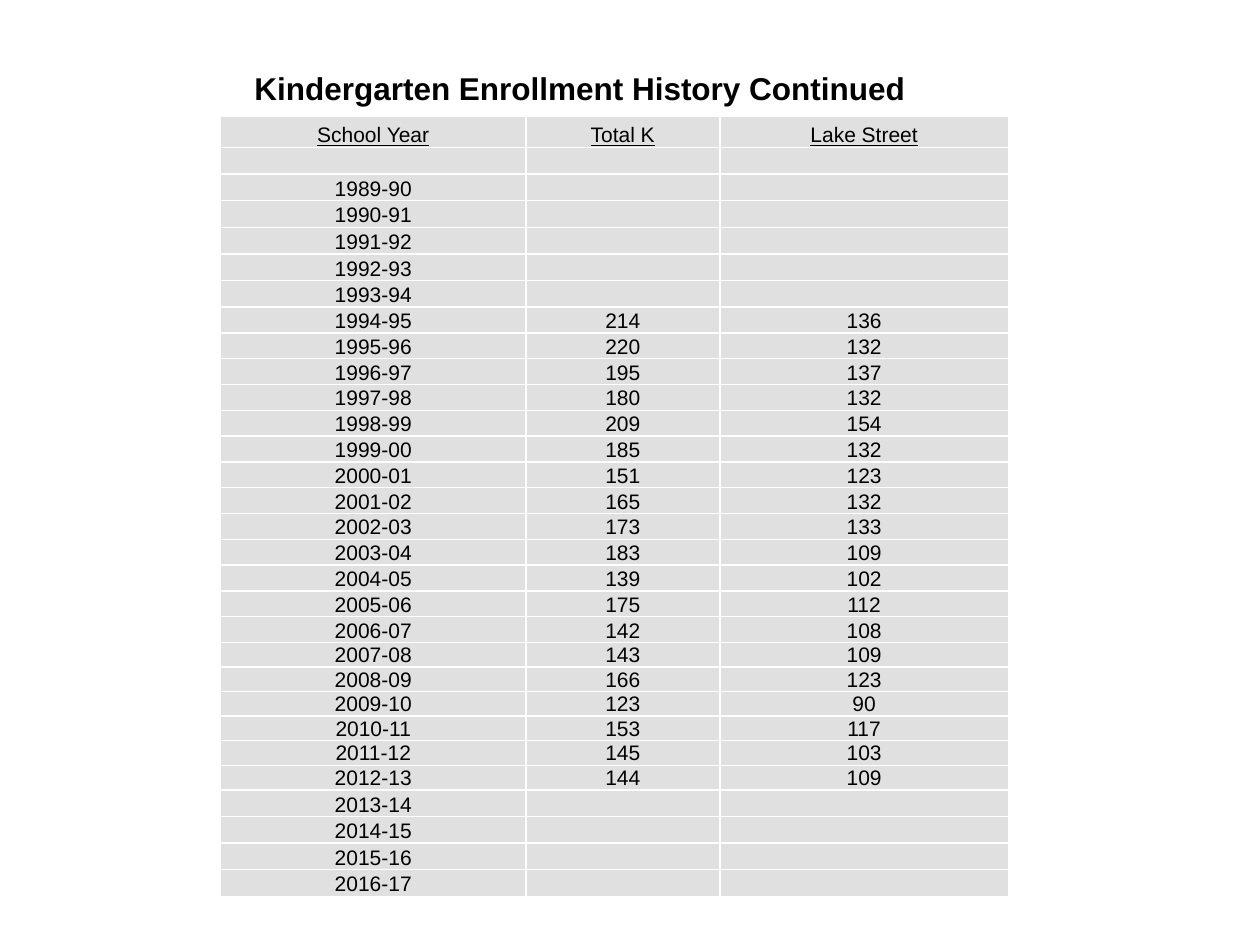
from lxml.etree import SubElement as Sub
from pptx import Presentation
from pptx.dml.color import RGBColor
from pptx.enum.text import MSO_ANCHOR as Anchor, PP_ALIGN as Align
from pptx.oxml.ns import qn
from pptx.util import Cm, Pt

# Content
TITLE = "Kindergarten Enrollment History Continued"
HEADS = ["School Year", "Total K", "Lake Street"]
FIRST, LAST = 1989, 2016
START = 1994  # first year with counts
TOTAL = [214, 220, 195, 180, 209, 185, 151, 165, 173, 183,
         139, 175, 142, 143, 166, 123, 153, 145, 144]
LAKE = [136, 132, 137, 132, 154, 132, 123, 132, 133, 109,
        102, 112, 108, 109, 123, 90, 117, 103, 109]

# Layout in cm
WIDTHS = [6.15, 3.91, 5.82]
HEIGHTS = [0.63] + [0.52] * 19 + [0.49] * 10
LEFT, TOP = 4.45, 2.34
INK, GREY, WHITE = "000000", "E1E0E0", "FFFFFF"


def color(code):
    return RGBColor.from_string(code)


def write(frame, text, size=12, bold=False, line=False, align=Align.LEFT):
    para = frame.paragraphs[0]
    para.alignment = align
    if not text:
        # An empty cell still needs a text size, or its row grows
        Sub(para._p, qn("a:endParaRPr"), sz=str(size * 100))
        return
    run = para.add_run()
    run.text = text
    font = run.font
    font.name, font.size = "Arial", Pt(size)
    font.bold, font.underline = bold, line
    font.color.rgb = color(INK)


def edge(cell):
    props = cell._tc.get_or_add_tcPr()
    for spot, side in enumerate(("lnL", "lnR", "lnT", "lnB")):
        line = props.makeelement(qn("a:" + side), {"w": str(Pt(1))})
        fill = Sub(line, qn("a:solidFill"))
        Sub(fill, qn("a:srgbClr"), val=WHITE)
        props.insert(spot, line)


def year_rows():
    counts = dict(enumerate(zip(TOTAL, LAKE), START))
    for year in range(FIRST, LAST + 1):
        pair = counts.get(year, ("", ""))
        yield [f"{year}-{(year + 1) % 100:02}", *map(str, pair)]


deck = Presentation()
deck.slide_width, deck.slide_height = Cm(25.4), Cm(19.05)
slide = deck.slides.add_slide(deck.slide_layouts[6])

# Enrollment table
rows = [HEADS, [""] * 3, *year_rows()]
table = slide.shapes.add_table(
    len(rows), len(HEADS), Cm(LEFT), Cm(TOP),
    Cm(sum(WIDTHS)), Cm(sum(HEIGHTS))).table
table.first_row = table.horz_banding = False
for col, width in zip(table.columns, WIDTHS):
    col.width = Cm(width)
for num, (row, height) in enumerate(zip(table.rows, HEIGHTS)):
    row.height = Cm(height)
    for cell, text in zip(row.cells, rows[num]):
        cell.fill.solid()
        cell.fill.fore_color.rgb = color(GREY)
        cell.margin_left = cell.margin_right = cell.margin_top = Cm(0.02)
        cell.margin_bottom = 0
        cell.vertical_anchor = Anchor.BOTTOM
        edge(cell)
        write(cell.text_frame, text, line=num == 0, align=Align.CENTER)

# Title
box = slide.shapes.add_textbox(Cm(4.88), Cm(1.27), Cm(15.44), Cm(1.02))
box.text_frame.word_wrap = True
write(box.text_frame, TITLE, size=18, bold=True)

deck.save("out.pptx")
